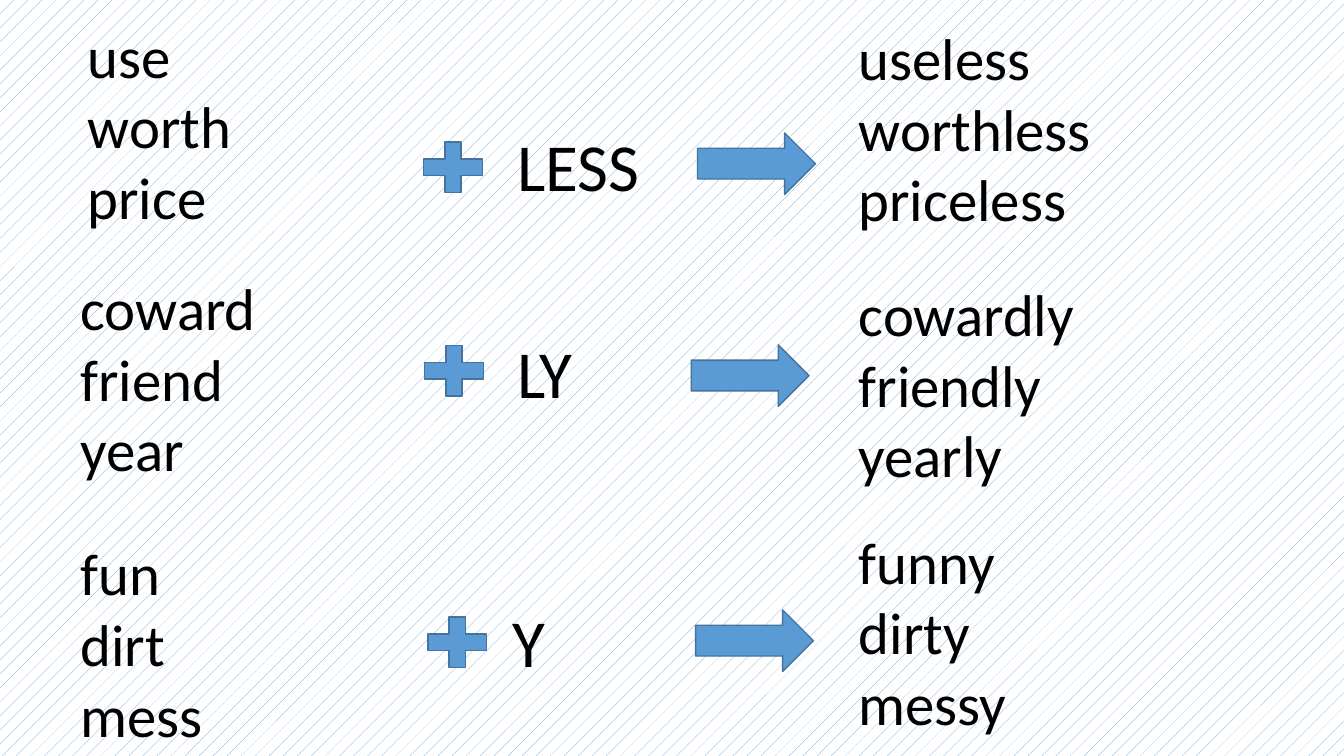
from pptx import Presentation
from pptx.dml.color import RGBColor
from pptx.enum.dml import MSO_PATTERN
from pptx.enum.shapes import MSO_SHAPE
from pptx.util import Cm, Pt

RESULT_LEFT = 21.39

# base words and place, plus place, suffix and place, arrow place, results and top (cm)
SUFFIX_ROWS = [
    (["use", "worth", "price"], (1.96, 0.36), (10.41, 3.35),
     "LESS", (12.78, 3.0), (17.58, 3.35),
     ["useless", "worthless", "priceless"], 0.43),
    (["coward", "friend", "year"], (1.78, 6.73), (10.44, 8.48),
     "LY", (12.78, 8.23), (17.42, 8.69),
     ["cowardly", "friendly", "yearly"], 6.88),
    (["fun", "dirt", "mess"], (1.78, 13.41), (10.52, 15.32),
     "Y", (12.67, 15.01), (17.53, 15.37),
     ["funny", "dirty", "messy"], 13.11),
]


def color(hex_string):
    return RGBColor.from_string(hex_string)


class SlideBuilder:
    FONT = "Calibri"
    TEXT = "000000"
    ACCENT = "5B9BD5"
    OUTLINE = "43739E"
    PAPER = "FFFFFF"

    def __init__(self, slide):
        self.slide = slide

    def background(self):
        fill = self.slide.background.fill
        fill.patterned()
        fill.pattern = MSO_PATTERN.PERCENT_5
        fill.fore_color.rgb = color(self.ACCENT)
        fill.back_color.rgb = color(self.PAPER)

    def text(self, lines, position, size, points):
        box = self.slide.shapes.add_textbox(*map(Cm, position + size))
        frame = box.text_frame
        frame.word_wrap = True
        frame.text = "\n".join(lines)
        for paragraph in frame.paragraphs:
            for run in paragraph.runs:
                run.font.name = self.FONT
                run.font.size = Pt(points)
                run.font.color.rgb = color(self.TEXT)

    def symbol(self, preset, position, size):
        shape = self.slide.shapes.add_shape(preset, *map(Cm, position + size))
        shape.shadow.inherit = False
        shape.fill.solid()
        shape.fill.fore_color.rgb = color(self.ACCENT)
        shape.line.color.rgb = color(self.OUTLINE)
        shape.line.width = Pt(1)


def main():
    presentation = Presentation()
    presentation.slide_width = Cm(33.87)
    presentation.slide_height = Cm(19.05)
    builder = SlideBuilder(presentation.slides.add_slide(presentation.slide_layouts[6]))
    builder.background()
    for (base_words, base_at, plus_at, suffix, suffix_at,
         arrow_at, results, result_top) in SUFFIX_ROWS:
        builder.text(base_words, base_at, (8, 5.64), 42)
        builder.symbol(MSO_SHAPE.MATH_PLUS, plus_at, (2.01, 1.73))
        builder.text([suffix], suffix_at, (4.5, 2.31), 48)
        builder.symbol(MSO_SHAPE.RIGHT_ARROW, arrow_at, (2.97, 1.55))
        builder.text(results, (RESULT_LEFT, result_top), (12, 5.64), 42)
    presentation.save("out.pptx")


if __name__ == "__main__":
    main()
